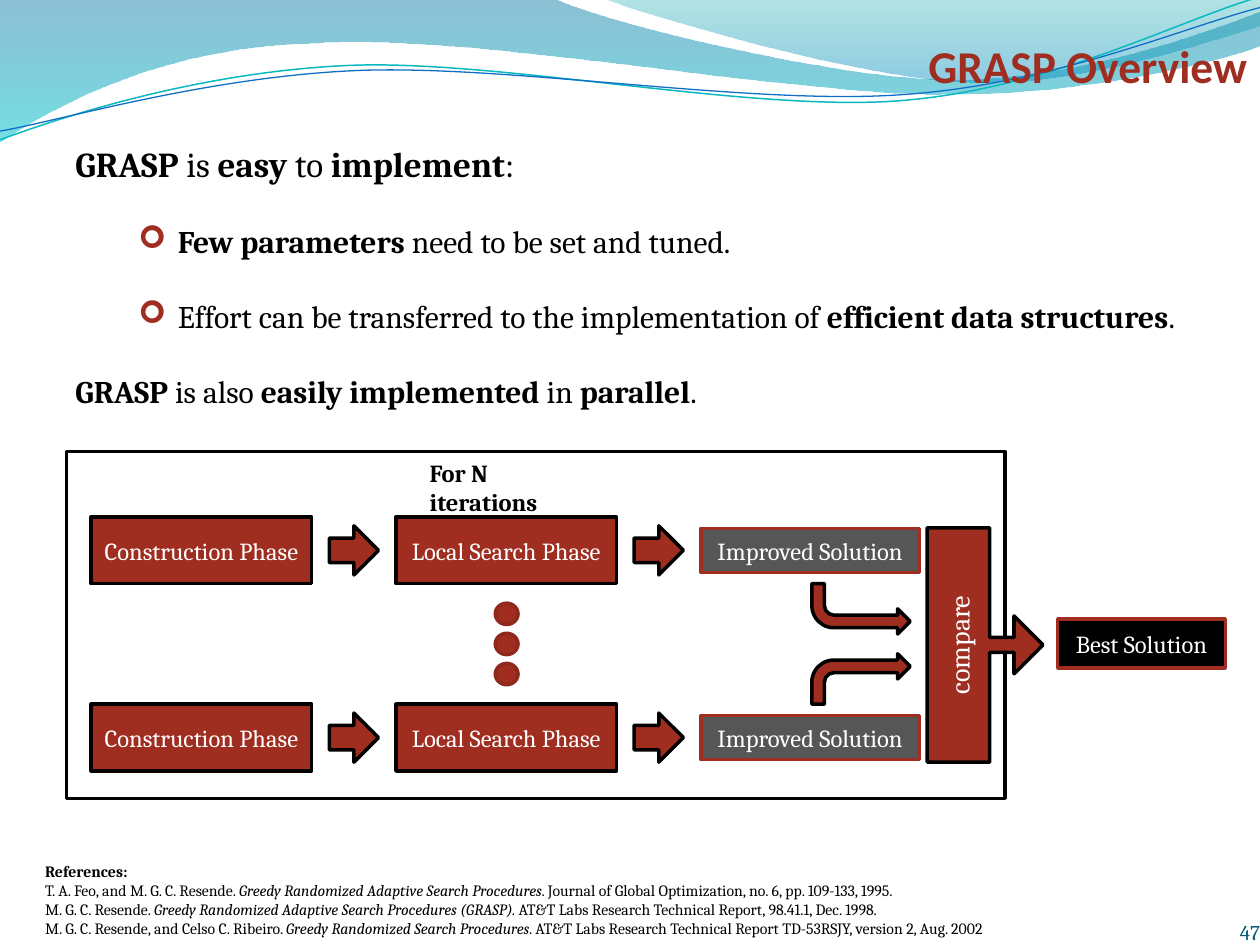
from math import cos, radians, sin

from lxml.etree import SubElement
from pptx import Presentation
from pptx.dml.color import RGBColor
from pptx.enum.shapes import MSO_SHAPE as Shape
from pptx.enum.text import MSO_ANCHOR as Anchor, PP_ALIGN as Align
from pptx.oxml.ns import qn
from pptx.util import Pt

COLORS = {
    "black": "000000", "white": "FFFFFF", "red": "9F2D20", "dark_red": "8F281D",
    "gray": "565656", "number": "045D75", "teal": "0AB8BF", "blue": "0F6FC6",
}

# Segments: two numbers are a straight line's end, six are a cubic curve.
# Gradient stops: colour and opacity in percent, from top to bottom.
BANDS = [
    ([(0, 0), (316.8, -0.7), (342.7, 12.2, 478.1, 45.4, 545.8, 45.4),
      (614.2, 45.4, 689.8, 18.7, 720, 6.5), (720.7, 25.9),
      (707.8, 31.7, 626.4, 54.7, 537.1, 54), (447.8, 54, 275, 20.2, 185, 24.5),
      (92.9, 25.9, 33.1, 59.8, -0.7, 81.4)],
     [("0074A1", 45), ("00C6CF", 55)]),
    ([(344.9, -0.7), (366.5, 7.9, 491, 44.6, 553.7, 46.8),
      (616.3, 49.7, 691.9, 23, 720, 15.1), (720, 0)],
     [("00A1A9", 30), ("008BBF", 45)]),
]
WAVES = [
    ([(0, 79.9), (34.6, 67, 113.8, 41, 199.4, 37.4),
      (284.4, 33.8, 427, 64.1, 513.4, 57.6),
      (599.8, 51.1, 675.4, 10.8, 718.6, -1.4)], "teal", 0.85),
    ([(0, 74.9), (33.8, 69.1, 118.1, 43.9, 203.8, 40.3),
      (290.2, 36.7, 429.8, 60.5, 516.2, 54),
      (601.9, 48.2, 677.5, 15.1, 720, 4.3)], "blue", 0.75),
]
WAVE_TILT, WAVE_CENTER = 2.7, (359.3, 41.8)

# Asterisks enclose emphasised words.
BODY = [
    ("*GRASP* is *easy* to *implement*:", 20, False),
    ("*Few parameters* need to be set and tuned.", 18, True),
    ("Effort can be transferred to the implementation of *efficient data structures*.", 18, True),
    ("*GRASP* is also *easily implemented* in *parallel*.", 18, False),
]
REFERENCES = [
    "T. A. Feo, and M. G. C. Resende. *Greedy Randomized Adaptive Search Procedures*"
    ". Journal of Global Optimization, no. 6, pp. 109-133, 1995.",
    "M. G. C. Resende. *Greedy Randomized Adaptive Search Procedures (GRASP).*"
    " AT&T Labs Research Technical Report, 98.41.1, Dec. 1998.",
    "M. G. C. Resende, and Celso C. Ribeiro. *Greedy Randomized Search Procedures*"
    ". AT&T Labs Research Technical Report TD-53RSJY, version 2, Aug. 2002",
]

# Label, width, height, fill, line
STAGES = [
    ("Construction Phase", 126, 38.2, "red", "black"),
    ("Local Search Phase", 126, 38.2, "red", "black"),
    ("Improved Solution", 124.9, 25.2, "gray", "red"),
]
ROW_CENTERS = (314.5, 421.5)
STAGE_LEFT, STAGE_PITCH = 52.1, 174.2
ARROW_SIZE, ARROW_OFFSET = 28.1, 136.1
DOT_TOP, DOT_PITCH, DOT_COUNT = 344.7, 17.2, 3


def rgb(name):
    return RGBColor.from_string(COLORS.get(name, name))


def style_font(font, size, color, name="Cambria", bold=False):
    font.size, font.name, font.bold = Pt(size), name, bold
    font.color.rgb = rgb(color)


def add_box(page, left, top, width, height):
    box = page.shapes.add_textbox(Pt(left), Pt(top), Pt(width), Pt(height))
    box.text_frame.word_wrap = True
    return box.text_frame


def add_line_box(page, area, text, size, color, align=Align.LEFT, **font):
    frame = add_box(page, *area)
    frame.text = text
    para = frame.paragraphs[0]
    para.alignment = align
    style_font(para.runs[0].font, size, color, **font)
    return frame


def add_marked_runs(para, text, size, emphasis):
    """Write text, setting the font attribute named by emphasis between asterisks."""
    for index, part in enumerate(text.split("*")):
        if part:
            span = para.add_run()
            span.text = part
            style_font(span.font, size, "black")
            if index % 2:
                setattr(span.font, emphasis, True)


def add_bullet(para):
    props = para._p.get_or_add_pPr()
    props.set("marL", str(Pt(58.5)))
    props.set("indent", str(-Pt(22.5)))
    SubElement(SubElement(props, qn("a:buClr")), qn("a:srgbClr"), val=COLORS["red"])
    SubElement(props, qn("a:buFont"), typeface="Wingdings")
    SubElement(props, qn("a:buChar"), char="➢")


def add_outline(page, segments, close):
    """Build through the segment ends, then bend the lines that have control points."""
    ends = [(Pt(segment[-2]), Pt(segment[-1])) for segment in segments]
    builder = page.shapes.build_freeform(*ends[0])
    builder.add_line_segments(ends[1:], close=close)
    shape = builder.convert_to_shape()
    shape.shadow.inherit = False
    lines = list(shape._element.spPr.iter(qn("a:lnTo")))
    for line, segment in zip(lines, segments[1:]):
        if len(segment) == 6:
            line.tag = qn("a:cubicBezTo")
            line.remove(line[0])
            for x, y in zip(segment[::2], segment[1::2]):
                SubElement(line, qn("a:pt"), x=str(Pt(x) - shape.left), y=str(Pt(y) - shape.top))
    return shape


def add_band(page, segments, stops):
    band = add_outline(page, segments, True)
    band.line.fill.background()
    band.fill.gradient()
    band.fill.gradient_angle = 270
    for stop, (color, _) in zip(band.fill.gradient_stops, stops):
        stop.color.rgb = rgb(color)
    for node, (_, opacity) in zip(band._element.spPr.iter(qn("a:srgbClr")), stops):
        SubElement(node, qn("a:alpha"), val=str(opacity * 1000))


def turn(segment, degrees, center):
    """Rotate all points of a segment clockwise about a center."""
    angle, (cx, cy) = radians(degrees), center
    turned = []
    for x, y in zip(segment[::2], segment[1::2]):
        turned += [cx + (x - cx) * cos(angle) - (y - cy) * sin(angle),
                   cy + (x - cx) * sin(angle) + (y - cy) * cos(angle)]
    return turned


def add_wave(page, segments, color, width):
    level = [turn(segment, WAVE_TILT, WAVE_CENTER) for segment in segments]
    wave = add_outline(page, level, False)
    wave.rotation = -WAVE_TILT
    wave.fill.background()
    wave.line.color.rgb = rgb(color)
    wave.line.width = Pt(width)


def add_figure(page, kind, left, top, width, height, fill="red", line="black", text="", size=14):
    shape = page.shapes.add_shape(kind, Pt(left), Pt(top), Pt(width), Pt(height))
    shape.shadow.inherit = False
    if fill:
        shape.fill.solid()
        shape.fill.fore_color.rgb = rgb(fill)
    else:
        shape.fill.background()
    shape.line.color.rgb = rgb(line)
    shape.line.width = Pt(2)
    if text:
        frame = shape.text_frame
        frame.text, frame.word_wrap = text, False
        frame.vertical_anchor = Anchor.MIDDLE
        frame.paragraphs[0].alignment = Align.CENTER
        style_font(frame.paragraphs[0].runs[0].font, size, "white")
    return shape


def add_diagram(page):
    add_figure(page, Shape.RECTANGLE, 604.4, 353.7, 95.8, 28.1, "black", "red", "Best Solution")
    add_figure(page, Shape.RECTANGLE, 37.9, 257.9, 536.4, 198.3, None)
    add_line_box(page, (238.5, 258.1, 105.1, 24.5), "For N iterations", 14, "black", bold=True)
    for center in ROW_CENTERS:
        for column, (label, width, height, fill, line) in enumerate(STAGES):
            left = STAGE_LEFT + column * STAGE_PITCH
            add_figure(page, Shape.RECTANGLE, left, center - height / 2, width, height,
                       fill, line, label)
            if column < len(STAGES) - 1:
                add_figure(page, Shape.RIGHT_ARROW, left + ARROW_OFFSET,
                           center - ARROW_SIZE / 2, ARROW_SIZE, ARROW_SIZE)
    for index in range(DOT_COUNT):
        add_figure(page, Shape.FLOWCHART_CONNECTOR, 283, DOT_TOP + index * DOT_PITCH,
                   13, 12.2, line="dark_red")
    compare = add_figure(page, Shape.RIGHT_ARROW_CALLOUT, 529.8, 301.6, 66.2, 133.9,
                         text="compare", size=16)
    for index, value in enumerate((0.13, 0.25, 0.25, 0.54)):
        compare.adjustments[index] = value
    compare.text_frame._txBody.bodyPr.set("vert", "vert270")
    add_figure(page, Shape.BENT_ARROW, 463.9, 373.6, 56.2, 28.8)
    upper = add_figure(page, Shape.BENT_ARROW, 463.9, 333.5, 56.2, 28.8)
    upper.rotation = 180
    upper._element.spPr.get_or_add_xfrm().set("flipH", "1")


def main():
    deck = Presentation()
    deck.slide_width, deck.slide_height = Pt(720), Pt(540)
    page = deck.slides.add_slide(deck.slide_layouts[6])
    for band in BANDS:
        add_band(page, *band)
    for wave in WAVES:
        add_wave(page, *wave)
    number = add_line_box(page, (552.2, 511.2, 167.8, 28.8), "47", 12, "number", Align.RIGHT)
    number.vertical_anchor = Anchor.BOTTOM
    number.margin_left = number.margin_top = number.margin_right = number.margin_bottom = 0
    add_line_box(page, (162, 18, 558, 38.9), "GRASP Overview", 26, "red", Align.RIGHT,
                 name="Calibri", bold=True)
    references = add_line_box(page, (18.7, 488.9, 666, 51.1), "References:", 9, "black", bold=True)
    for text in REFERENCES:
        add_marked_runs(references.add_paragraph(), text, 9, "italic")
    body = add_box(page, 36, 77.8, 666, 162.7)
    for index, (text, size, bulleted) in enumerate(BODY):
        para = body.add_paragraph() if index else body.paragraphs[0]
        para.alignment = Align.JUSTIFY
        if index:
            para.space_before = Pt(21.4)
        if bulleted:
            add_bullet(para)
        add_marked_runs(para, text, size, "bold")
    add_diagram(page)
    deck.save("out.pptx")


if __name__ == "__main__":
    main()
